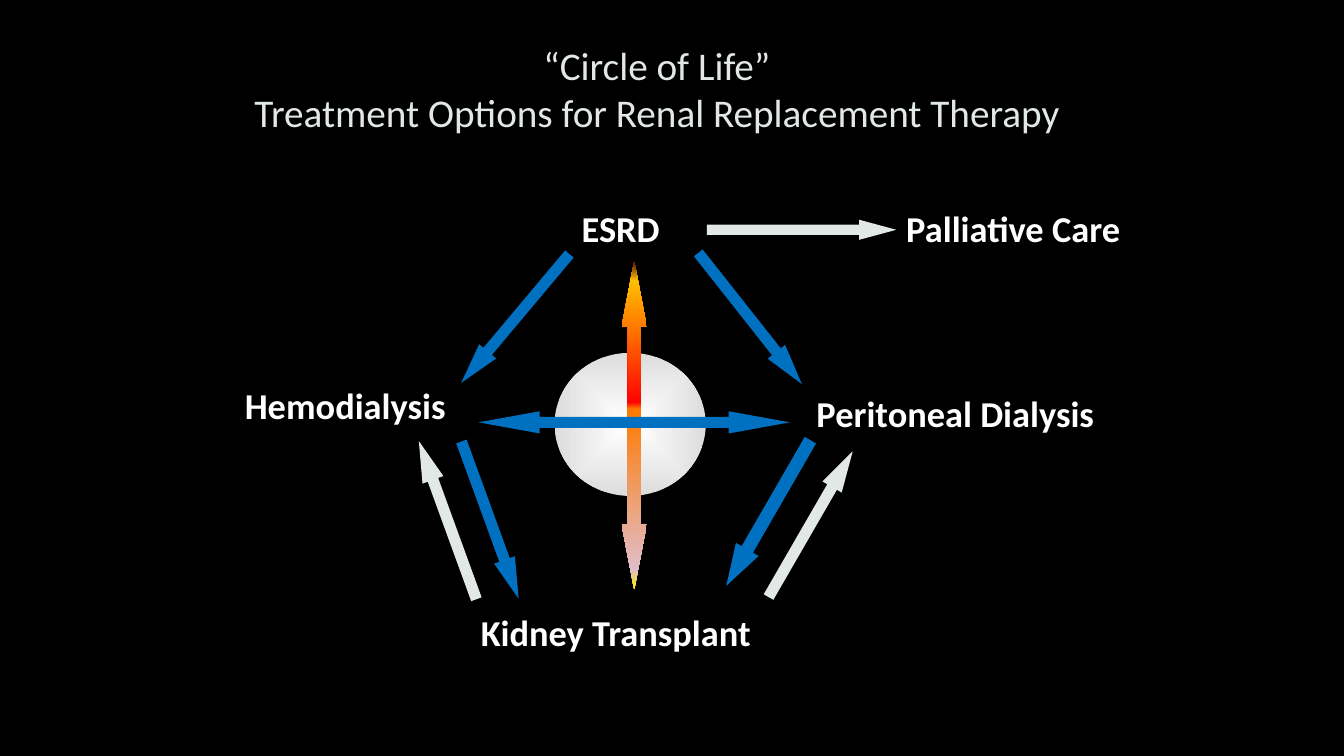
from dataclasses import dataclass

from lxml.etree import SubElement
from pptx import Presentation
from pptx.dml.color import RGBColor
from pptx.enum.shapes import MSO_SHAPE as Shape
from pptx.enum.text import MSO_ANCHOR as Anchor, MSO_AUTO_SIZE as AutoSize, PP_ALIGN as Align
from pptx.oxml.ns import qn
from pptx.util import Inches, Pt


@dataclass(frozen=True)
class Theme:
    """Colours and type of the slide."""
    font: str = "Calibri"
    title_size: int = 28
    label_size: int = 26
    background: str = "000000"
    pale: str = "E2E8E6"
    label: str = "FFFFFF"
    blue: str = "0070C0"
    hub: tuple = ((0, "FFFFFF"), (100, "DDDDDD"))
    flame: tuple = ((0, "FFF200"), (6, "E0BDC8"), (55, "FF7A00"),
                    (57, "FF0300"), (94, "FFC000"), (100, "4D0808"))


THEME = Theme()

LABELS = (
    ("ESRD", 3.34, 0, 1.21),
    ("Palliative Care", 6.56, 0, 2.57),
    ("Hemodialysis", 0, 1.75, 2.4),
    ("Peritoneal Dialysis", 5.67, 1.83, 3.2),
    ("Kidney Transplant", 2.34, 4, 3.18),
)

PATHWAYS = (
    (5.11, 1.16, 1.66, 0.22, 51.7, 1.86, THEME.blue),
    (2.78, 1.16, 1.67, 0.22, 130, 1.86, THEME.blue),
    (2.53, 3.16, 1.66, 0.22, 70, 1.86, THEME.blue),
    (2.11, 3.16, 1.67, 0.22, 250, 1.86, THEME.pale),
    (5.29, 3.09, 1.67, 0.26, 120, 1.61, THEME.blue),
    (5.71, 3.2, 1.67, 0.22, 300, 1.86, THEME.pale),
    (5.62, 0.28, 1.88, 0.2, 0, 1.85, THEME.pale),
)


def add_run(paragraph, text, size, color, bold=False):
    """Append one styled run to a paragraph."""
    run = paragraph.add_run()
    run.text = text
    run.font.name = THEME.font
    run.font.size = Pt(size)
    run.font.bold = bold
    run.font.color.rgb = RGBColor.from_string(color)


def fill_gradient(shape, stops, angle=None):
    """Fill a shape with a linear gradient, or one from its centre if no angle is given."""
    shape.fill.gradient()
    gradient = shape.fill._xPr.find(qn("a:gradFill"))
    for part in list(gradient):
        gradient.remove(part)
    gradient.set("rotWithShape", "1")
    stop_list = SubElement(gradient, qn("a:gsLst"))
    for percent, color in stops:
        stop = SubElement(stop_list, qn("a:gs"), pos=str(percent * 1000))
        SubElement(stop, qn("a:srgbClr"), val=color)
    if angle is None:
        center = SubElement(gradient, qn("a:path"), path="shape")
        SubElement(center, qn("a:fillToRect"), dict.fromkeys("ltrb", "50000"))
    else:
        SubElement(gradient, qn("a:lin"), ang=str(angle * 60000), scaled="1")


def add_centered(slide, kind, x, y, width, height, rotation=0):
    """Place a plain shape by its centre."""
    shape = slide.shapes.add_shape(kind, Inches(x - width / 2), Inches(y - height / 2),
                                   Inches(width), Inches(height))
    shape.rotation = rotation
    shape.shadow.inherit = False
    shape.line.fill.background()
    return shape


def add_arrow(slide, kind, x, y, length, thickness, rotation, head):
    """Place a block arrow by its centre and direction."""
    arrow = add_centered(slide, kind, x, y, length, thickness, rotation)
    arrow.adjustments[0] = 0.5
    arrow.adjustments[1] = head
    return arrow


def paint(shape, color):
    """Give a shape a solid fill."""
    shape.fill.solid()
    shape.fill.fore_color.rgb = RGBColor.from_string(color)


def add_title(slide, left, top, width, height):
    """Write the two-line title centred in its box."""
    title = slide.shapes.add_textbox(Inches(left), Inches(top), Inches(width), Inches(height))
    frame = title.text_frame
    frame.word_wrap = True
    frame.vertical_anchor = Anchor.MIDDLE
    paragraph = frame.paragraphs[0]
    paragraph.alignment = Align.CENTER
    add_run(paragraph, "“Circle of Life”", THEME.title_size, THEME.pale)
    paragraph.add_line_break()
    add_run(paragraph, "Treatment Options for Renal Replacement Therapy",
            THEME.title_size, THEME.pale)


def add_hub(slide, left, top):
    """Draw the sphere and the two double arrows that cross it."""
    sphere = add_centered(slide, Shape.OVAL, left + 3.92, top + 2.21, 1.5, 1.42)
    fill_gradient(sphere, THEME.hub)
    transplant_axis = add_arrow(slide, Shape.LEFT_RIGHT_ARROW, left + 3.96, top + 2.22,
                                3.26, 0.25, 90, 2.6)
    fill_gradient(transplant_axis, THEME.flame, 180)
    dialysis_axis = add_arrow(slide, Shape.LEFT_RIGHT_ARROW, left + 3.96, top + 2.19,
                              3.09, 0.22, 0, 2.76)
    paint(dialysis_axis, THEME.blue)


def add_treatment_circle(slide, left, top):
    """Draw the hub, the pathways and the treatment names."""
    add_hub(slide, left, top)
    for x, y, length, thickness, rotation, head, color in PATHWAYS:
        pathway = add_arrow(slide, Shape.RIGHT_ARROW, left + x, top + y,
                            length, thickness, rotation, head)
        paint(pathway, color)
    for name, x, y, width in LABELS:
        treatment = slide.shapes.add_textbox(Inches(left + x), Inches(top + y),
                                             Inches(width), Inches(0.54))
        frame = treatment.text_frame
        frame.word_wrap = False
        frame.auto_size = AutoSize.SHAPE_TO_FIT_TEXT
        add_run(frame.paragraphs[0], name, THEME.label_size, THEME.label, bold=True)


def main():
    """Build and save the slide."""
    deck = Presentation()
    deck.slide_width, deck.slide_height = Inches(13.33), Inches(7.5)
    slide = deck.slides.add_slide(deck.slide_layouts[6])
    paint(slide.background, THEME.background)
    add_title(slide, 2.42, 0.42, 8.19, 0.92)
    add_treatment_circle(slide, 2.33, 2)
    deck.save("out.pptx")


if __name__ == "__main__":
    main()
